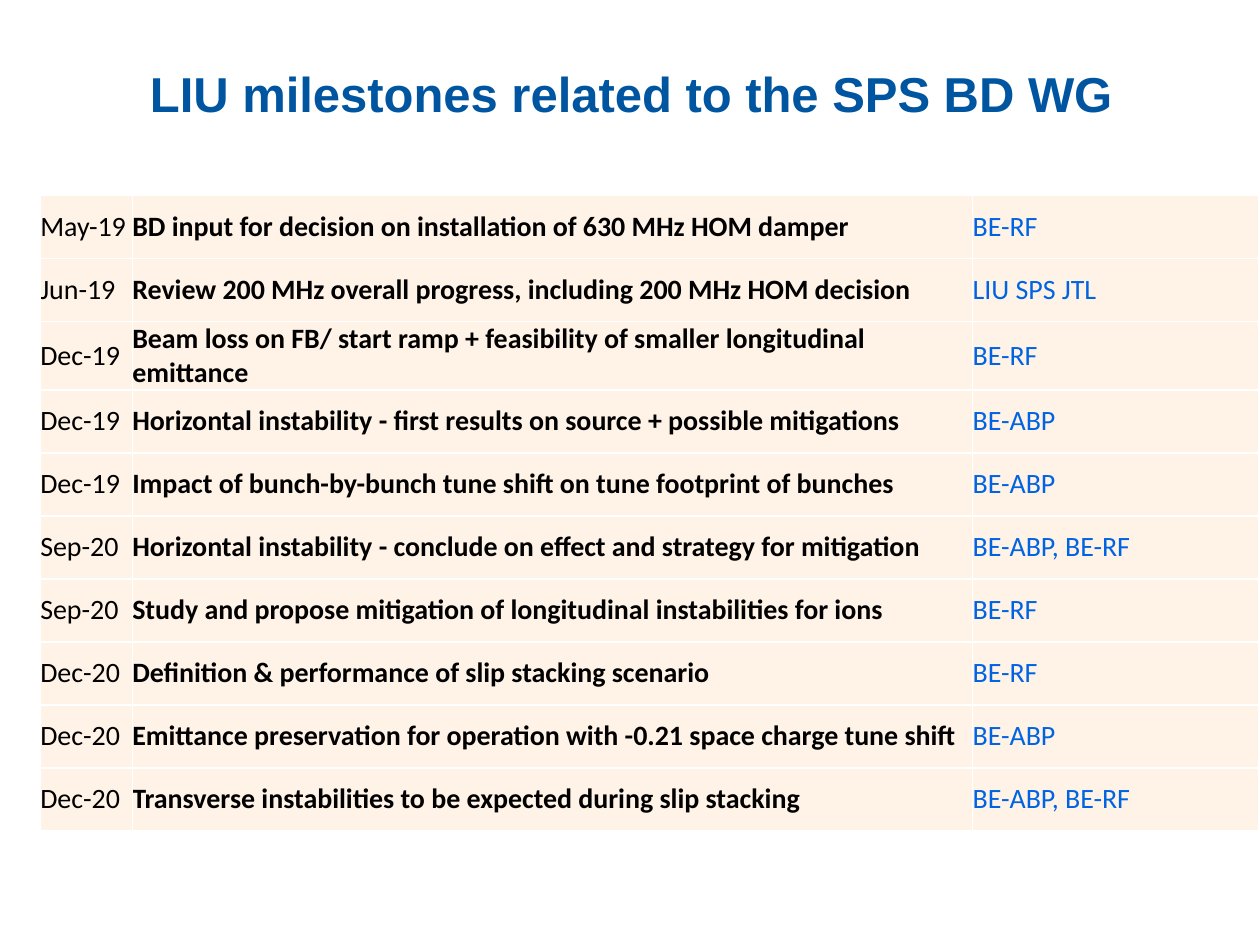
from lxml import etree
from pptx import Presentation, util as u
from pptx.dml.color import RGBColor
from pptx.enum import text
from pptx.oxml.ns import qn

TITLE_BLUE = RGBColor(0x00, 0x55, 0xA0)
TEAM_BLUE = RGBColor(0x00, 0x64, 0xE2)
BLACK = RGBColor(0x00, 0x00, 0x00)
WHITE = RGBColor(0xFF, 0xFF, 0xFF)
CREAM = RGBColor(0xFF, 0xF3, 0xE8)

MILESTONES = [
    ("May-19", "BD input for decision on installation of 630 MHz HOM damper", "BE-RF"),
    ("Jun-19", "Review 200 MHz overall progress, including 200 MHz HOM decision", "LIU SPS JTL"),
    ("Dec-19", "Beam loss on FB/ start ramp + feasibility of smaller longitudinal emittance", "BE-RF"),
    ("Dec-19", "Horizontal instability - first results on source + possible mitigations", "BE-ABP"),
    ("Dec-19", "Impact of bunch-by-bunch tune shift on tune footprint of bunches", "BE-ABP"),
    ("Sep-20", "Horizontal instability - conclude on effect and strategy for mitigation", "BE-ABP, BE-RF"),
    ("Sep-20", "Study and propose mitigation of longitudinal instabilities for ions", "BE-RF"),
    ("Dec-20", "Definition & performance of slip stacking scenario", "BE-RF"),
    ("Dec-20", "Emittance preservation for operation with -0.21 space charge tune shift", "BE-ABP"),
    ("Dec-20", "Transverse instabilities to be expected during slip stacking", "BE-ABP, BE-RF"),
]
COLUMN_WIDTHS = [0.73, 6.67, 2.27]
COLUMN_FORMATS = [
    dict(color=BLACK),
    dict(color=BLACK, bold=True),
    dict(color=TEAM_BLUE),
]
ROW_HEIGHT = 0.5


def write(tf, content, size=16, font="Calibri", color=BLACK, bold=False):
    p = tf.paragraphs[0]
    p.alignment = text.PP_ALIGN.LEFT
    r = p.add_run()
    r.text = content
    r.font.size = u.Pt(size)
    r.font.name = font
    r.font.bold = bold
    r.font.color.rgb = color


def add_borders(cell, color, width):
    """Must run before the cell's fill is set, as borders come first in the XML."""
    tcPr = cell._tc.get_or_add_tcPr()
    for side in ("a:lnL", "a:lnR", "a:lnT", "a:lnB"):
        ln = etree.SubElement(tcPr, qn(side), w=str(u.Pt(width)))
        fill = etree.SubElement(ln, qn("a:solidFill"))
        etree.SubElement(fill, qn("a:srgbClr"), val=str(color))


prs = Presentation()
prs.slide_width, prs.slide_height = u.Inches(10), u.Inches(7.5)
s = prs.slides.add_slide(prs.slide_layouts[5])

title = s.shapes.title
title.left, title.top = u.Inches(1.09), u.Inches(0.41)
title.width, title.height = u.Inches(8.71), u.Inches(0.82)
tf = title.text_frame
tf.word_wrap = True
tf.auto_size = text.MSO_AUTO_SIZE.NONE
tf.vertical_anchor = text.MSO_ANCHOR.TOP
tf.margin_top = u.Inches(0.09)
write(tf, "LIU milestones related to the SPS BD WG",
      size=28, font="Arial", color=TITLE_BLUE, bold=True)

table = s.shapes.add_table(
    len(MILESTONES), len(COLUMN_WIDTHS), u.Inches(0.32), u.Inches(1.55),
    u.Inches(sum(COLUMN_WIDTHS)), u.Inches(ROW_HEIGHT * len(MILESTONES))).table
table.first_row = table.horz_banding = False
for column, width in zip(table.columns, COLUMN_WIDTHS):
    column.width = u.Inches(width)

for row, milestone in enumerate(MILESTONES):
    table.rows[row].height = u.Inches(ROW_HEIGHT)
    for col, (content, style) in enumerate(zip(milestone, COLUMN_FORMATS)):
        cell = table.cell(row, col)
        add_borders(cell, WHITE, 1)
        cell.fill.solid()
        cell.fill.fore_color.rgb = CREAM
        cell.margin_left = cell.margin_right = 0
        cell.margin_top = cell.margin_bottom = 0
        cell.vertical_anchor = text.MSO_ANCHOR.MIDDLE
        write(cell.text_frame, content, **style)

prs.save("out.pptx")
